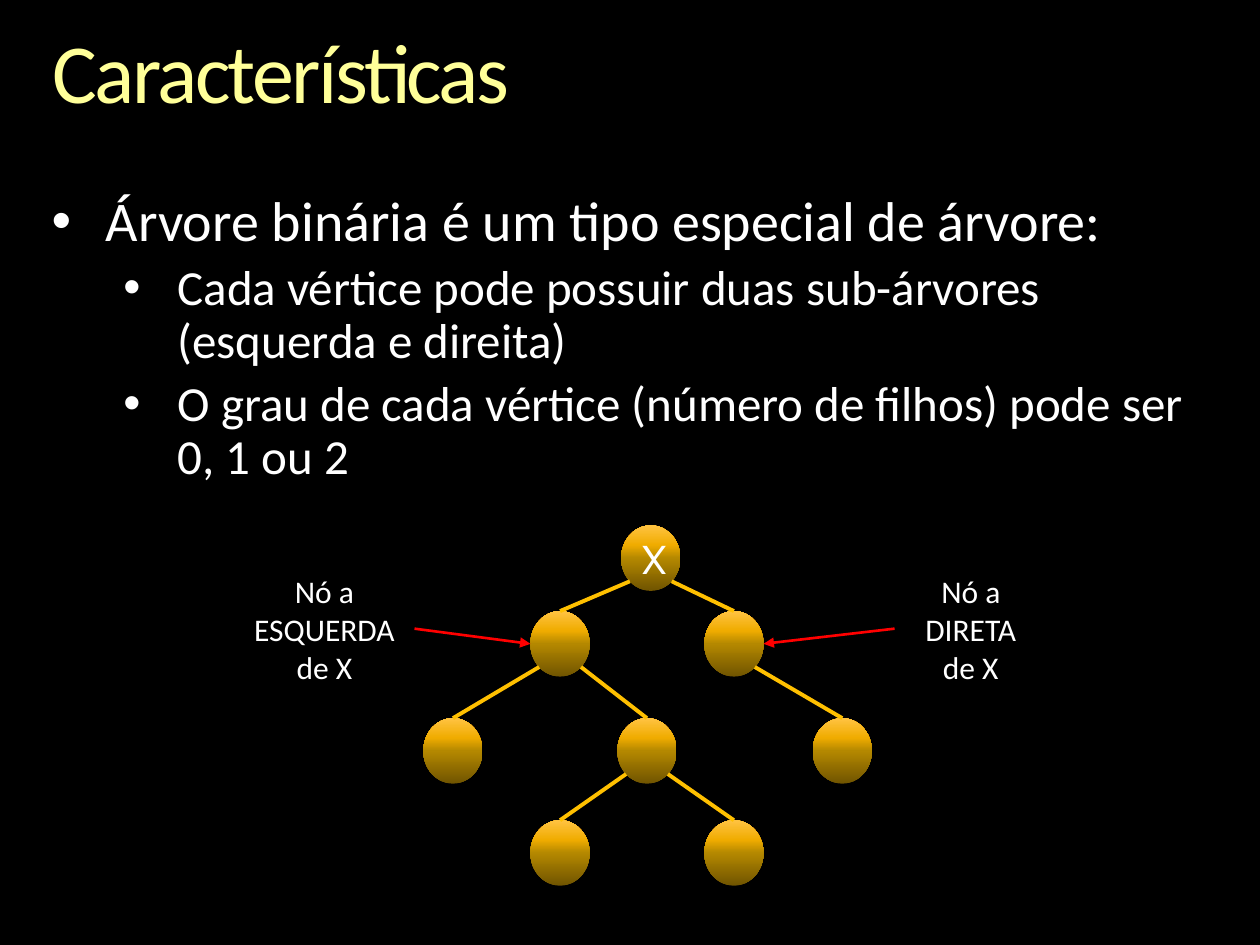
from math import cos, pi, sin

from lxml.etree import SubElement
from pptx import Presentation
from pptx.dml.color import RGBColor
from pptx.enum.shapes import MSO_CONNECTOR, MSO_SHAPE
from pptx.enum.text import MSO_ANCHOR, PP_ALIGN
from pptx.oxml import parse_xml
from pptx.oxml.ns import nsdecls, qn
from pptx.util import Inches, Pt

BLACK = RGBColor(0x00, 0x00, 0x00)
WHITE = RGBColor(0xFF, 0xFF, 0xFF)
CREAM = RGBColor(0xFF, 0xFF, 0x99)
GOLD = RGBColor(0xFF, 0xC0, 0x00)
RED = RGBColor(0xFF, 0x00, 0x00)
NODE_STOPS = [
    (0, RGBColor(0x70, 0x54, 0x00)),
    (50, RGBColor(0xB4, 0x88, 0x00)),
    (70, RGBColor(0xF0, 0xAC, 0x00)),
    (100, RGBColor(0xFF, 0xC3, 0x42)),
]

NODE_WIDTH, NODE_HEIGHT = 4.7, 6.93
LEVEL_TOPS = [55.6, 64.67, 76, 86.8]
NODES = {
    "root": (49.3, 0),
    "left": (42.1, 1),
    "right": (55.9, 1),
    "left left": (33.6, 2),
    "left right": (49, 2),
    "right right": (64.5, 2),
    "inner left": (42.1, 3),
    "inner right": (55.9, 3),
}
EDGES = [
    ("root", "left"),
    ("left", "left left"),
    ("root", "right"),
    ("left", "left right"),
    ("right", "right right"),
    ("left right", "inner left"),
    ("left right", "inner right"),
]
BULLETS = [
    (0, "Árvore binária é um tipo especial de árvore:"),
    (1, "Cada vértice pode possuir duas sub-árvores (esquerda e direita)"),
    (1, "O grau de cada vértice (número de filhos) pode ser 0, 1 ou 2"),
]
BULLET_SIZES = [32, 28]
BULLET_INDENTS = [0.43, 1]
HANGING = 0.43


class TreeSlide:
    font = "Calibri"
    node_font = "Cabin"

    def __init__(self, deck):
        self.deck = deck
        self.page = deck.slides.add_slide(deck.slide_layouts[6])
        self.page.background.fill.solid()
        self.page.background.fill.fore_color.rgb = BLACK

    def across(self, percent):
        return round(self.deck.slide_width * percent / 100)

    def down(self, percent):
        return round(self.deck.slide_height * percent / 100)

    def place(self, left, top, width, height):
        return self.across(left), self.down(top), self.across(width), self.down(height)

    def style(self, paragraph, size, color=WHITE, font=None):
        paragraph.font.name = font or self.font
        paragraph.font.size = Pt(size)
        paragraph.font.color.rgb = color

    def frame(self, left, top, width, height, inset=True):
        box = self.page.shapes.add_textbox(*self.place(left, top, width, height))
        frame = box.text_frame
        frame.word_wrap = True
        if not inset:
            frame.margin_left = frame.margin_right = 0
            frame.margin_top = frame.margin_bottom = 0
        return frame

    def title(self, text, *area):
        paragraph = self.frame(*area, inset=False).paragraphs[0]
        paragraph.line_spacing = 0.9
        span = paragraph.add_run()
        span.text = text
        self.style(span, 48, CREAM)
        span.font._element.set("spc", "-150")

    def bullets(self, items, *area):
        frame = self.frame(*area, inset=False)
        for index, (level, text) in enumerate(items):
            paragraph = frame.add_paragraph() if index else frame.paragraphs[0]
            paragraph.text = text
            paragraph.level = level
            paragraph.line_spacing = 0.9
            size = BULLET_SIZES[level]
            if index:
                paragraph.space_before = Pt(size * 0.2)
            properties = paragraph._p.get_or_add_pPr()
            properties.set("marL", str(Inches(BULLET_INDENTS[level])))
            properties.set("indent", str(-Inches(HANGING)))
            SubElement(properties, qn("a:buFont")).set("typeface", "Arial")
            SubElement(properties, qn("a:buChar")).set("char", "•")
            self.style(paragraph, size)

    def label(self, text, *area):
        paragraph = self.frame(*area).paragraphs[0]
        paragraph.text = text
        paragraph.alignment = PP_ALIGN.CENTER
        self.style(paragraph, 18)

    def node(self, left, level, text=""):
        area = self.place(left, LEVEL_TOPS[level], NODE_WIDTH, NODE_HEIGHT)
        shape = self.page.shapes.add_shape(MSO_SHAPE.OVAL, *area)
        shape.shadow.inherit = False
        shape.line.fill.background()
        stops = "".join(
            f'<a:gs pos="{position * 1000}"><a:srgbClr val="{color}"/></a:gs>'
            for position, color in NODE_STOPS
        )
        shape.fill.gradient()
        gradient = shape._element.spPr.find(qn("a:gradFill"))
        gradient.replace(
            gradient.find(qn("a:gsLst")),
            parse_xml(f"<a:gsLst {nsdecls('a')}>{stops}</a:gsLst>"),
        )
        shape.fill.gradient_angle = 90
        if text:
            shape.text_frame.vertical_anchor = MSO_ANCHOR.MIDDLE
            paragraph = shape.text_frame.paragraphs[0]
            paragraph.text = text
            paragraph.alignment = PP_ALIGN.CENTER
            self.style(paragraph, 23, font=self.node_font)

    def line(self, start, end, color, width, arrow=False):
        connector = self.page.shapes.add_connector(
            MSO_CONNECTOR.STRAIGHT,
            self.across(start[0]), self.down(start[1]),
            self.across(end[0]), self.down(end[1]),
        )
        connector.line.color.rgb = color
        connector.line.width = Pt(width)
        if arrow:
            SubElement(connector.line._ln, qn("a:tailEnd")).set("type", "triangle")
        SubElement(connector._element.spPr, qn("a:effectLst"))

    def edge(self, parent, child):
        parent_left, parent_level = NODES[parent]
        child_left, child_level = NODES[child]
        side = 1 if child_left > parent_left else -1
        start = (
            parent_left + NODE_WIDTH / 2 * (1 + side * cos(pi / 4)),
            LEVEL_TOPS[parent_level] + NODE_HEIGHT / 2 * (1 + sin(pi / 4)),
        )
        end = (child_left + NODE_WIDTH / 2, LEVEL_TOPS[child_level])
        self.line(start, end, GOLD, 2.25)


def main():
    deck = Presentation()
    deck.slide_width, deck.slide_height = Inches(10), Inches(7.5)
    slide = TreeSlide(deck)
    slide.title("Características", 4.2, 3.33, 91.7, 9.73)
    slide.bullets(BULLETS, 4.1, 20.4, 91.7, 31.6)
    for name, (left, level) in NODES.items():
        slide.node(left, level, "X" if name == "root" else "")
    for parent, child in EDGES:
        slide.edge(parent, child)

    slide.label("Nó a ESQUERDA de X", 18.6, 59.87, 14.3, 13.47)
    slide.label("Nó a DIRETA de X", 71, 59.87, 12.1, 13.47)
    middle = LEVEL_TOPS[1] + NODE_HEIGHT / 2
    slide.line((32.9, 66.53), (NODES["left"][0], middle), RED, 1.5, arrow=True)
    slide.line((71, 66.53), (NODES["right"][0] + NODE_WIDTH, middle), RED, 1.5, arrow=True)
    deck.save("out.pptx")


if __name__ == "__main__":
    main()
